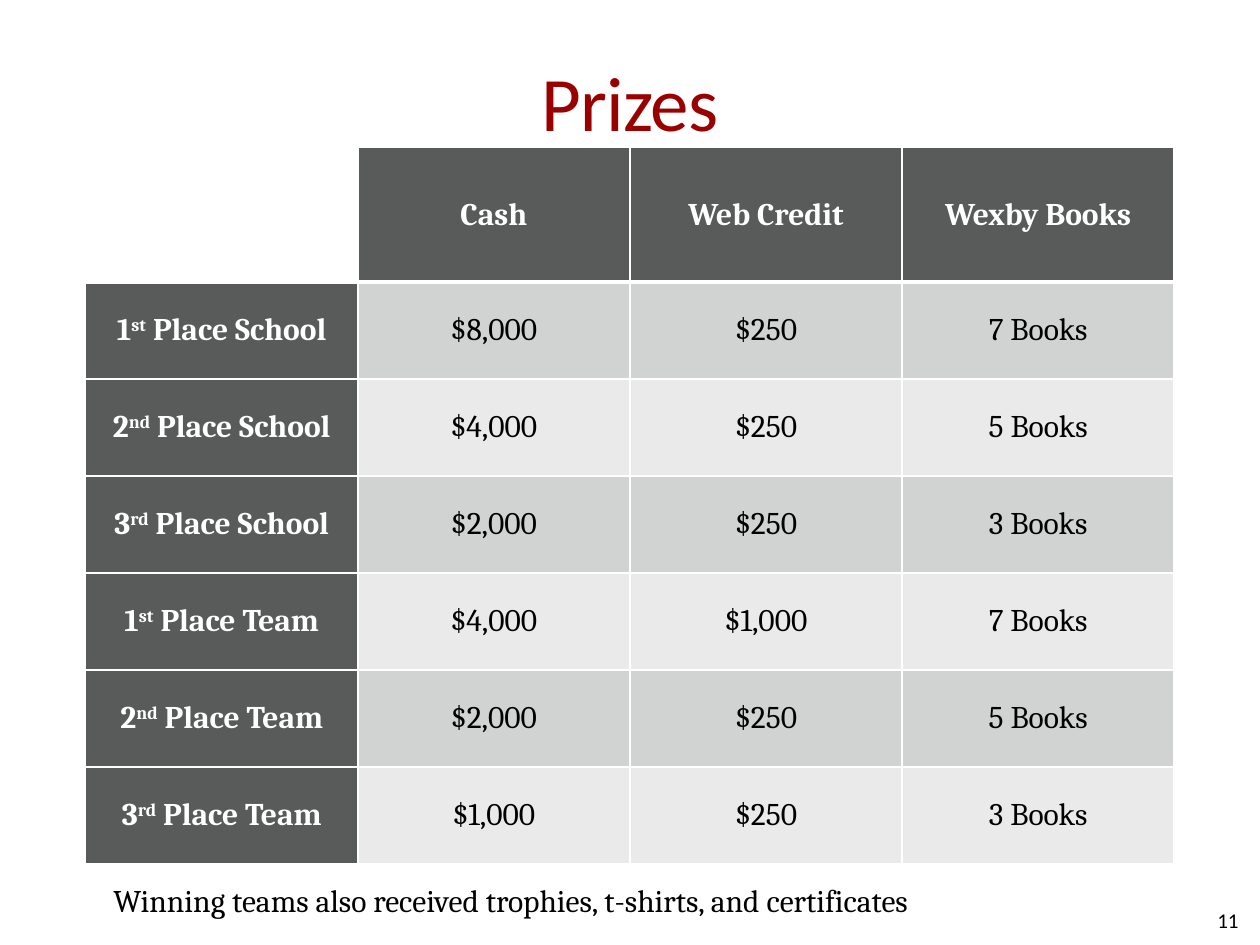
import pptx
import pptx.dml.color
import pptx.enum.text
import pptx.oxml
import pptx.oxml.ns
import pptx.util

Pt = pptx.util.Pt
ALIGN = pptx.enum.text.PP_ALIGN
MIDDLE = pptx.enum.text.MSO_ANCHOR.MIDDLE

COLORS = {
    "title": "990000",
    "header": "595A5A",
    "odd_row": "D1D2D2",
    "even_row": "EAEAEA",
    "light": "FFFFFF",
    "dark": "000000",
}
HEADINGS = ["Cash", "Web Credit", "Wexby Books"]
PRIZES = [
    ("1", "st", " Place School", "$8,000", "$250", "7 Books"),
    ("2", "nd", " Place School", "$4,000", "$250", "5 Books"),
    ("3", "rd", " Place School", "$2,000", "$250", "3 Books"),
    ("1", "st", " Place Team", "$4,000", "$1,000", "7 Books"),
    ("2", "nd", " Place Team", "$2,000", "$250", "5 Books"),
    ("3", "rd", " Place Team", "$1,000", "$250", "3 Books"),
]
COLUMN_WIDTH = 155.52
HEADER_HEIGHT = 77
ROW_HEIGHT = 55.44


def rgb(name):
    return pptx.dml.color.RGBColor.from_string(COLORS[name])


def style_paragraph(paragraph, font_name, size, color, align=ALIGN.CENTER, bold=False):
    paragraph.alignment = align
    paragraph.font.name = font_name
    paragraph.font.size = Pt(size)
    paragraph.font.bold = bold
    paragraph.font.color.rgb = rgb(color)


def add_text(slide, box, text, font_name, size, color, align=ALIGN.CENTER, insets=None):
    """Add a one-line text box; insets are (side, top and bottom)."""
    frame = slide.shapes.add_textbox(*map(Pt, box)).text_frame
    if insets:
        frame.word_wrap = True
        frame.vertical_anchor = MIDDLE
        frame.margin_left = frame.margin_right = Pt(insets[0])
        frame.margin_top = frame.margin_bottom = Pt(insets[1])
    else:
        frame.word_wrap = False
        frame.auto_size = pptx.enum.text.MSO_AUTO_SIZE.SHAPE_TO_FIT_TEXT
    paragraph = frame.paragraphs[0]
    paragraph.add_run().text = text
    style_paragraph(paragraph, font_name, size, color, align)
    return paragraph


def set_borders(cell, row):
    """Draw white cell borders, heavier below the heading row."""
    widths = {"L": 1, "R": 1, "T": 3 if row == 1 else 1, "B": 3 if row == 0 else 1}
    properties = cell._tc.get_or_add_tcPr()
    for side, width in widths.items():
        properties.append(pptx.oxml.parse_xml(
            f'<a:ln{side} {pptx.oxml.ns.nsdecls("a")} w="{int(Pt(width))}">'
            f'<a:solidFill><a:srgbClr val="{COLORS["light"]}"/></a:solidFill>'
            f'</a:ln{side}>'))


def fill_cell(cell, row, parts, fill, color, bold):
    """Write the text parts in one cell; the second part is superscript."""
    set_borders(cell, row)
    cell.fill.solid()
    cell.fill.fore_color.rgb = rgb(fill)
    cell.vertical_anchor = MIDDLE
    paragraph = cell.text_frame.paragraphs[0]
    for index, part in enumerate(parts):
        run = paragraph.add_run()
        run.text = part
        if index == 1:
            run._r.get_or_add_rPr().set("baseline", "30000")
    style_paragraph(paragraph, "Cambria", 18, color, bold=bold)


def add_prize_table(slide):
    rows, columns = len(PRIZES) + 1, len(HEADINGS) + 1
    table = slide.shapes.add_table(
        rows, columns, Pt(48.96), Pt(84.24), Pt(columns * COLUMN_WIDTH),
        Pt(HEADER_HEIGHT + len(PRIZES) * ROW_HEIGHT)).table
    table.first_row = table.horz_banding = False
    for column in table.columns:
        column.width = Pt(COLUMN_WIDTH)
    for row, table_row in enumerate(table.rows):
        table_row.height = Pt(ROW_HEIGHT if row else HEADER_HEIGHT)

    corner = table.cell(0, 0)
    set_borders(corner, 0)
    corner.fill.background()
    for column, heading in enumerate(HEADINGS, 1):
        fill_cell(table.cell(0, column), 0, [heading], "header", "light", True)
    for row, (*place, cash, credit, books) in enumerate(PRIZES, 1):
        fill_cell(table.cell(row, 0), row, place, "header", "light", True)
        band = "odd_row" if row % 2 else "even_row"
        for column, prize in enumerate((cash, credit, books), 1):
            fill_cell(table.cell(row, column), row, [prize], band, "dark", False)


def main():
    presentation = pptx.Presentation()
    presentation.slide_width, presentation.slide_height = Pt(720), Pt(540)
    slide = presentation.slides.add_slide(presentation.slide_layouts[6])
    title = add_text(slide, (36, 12.24, 648, 90), "Prizes", "Calibri", 44, "title",
                     insets=(0, 3.6))
    title.runs[0]._r.get_or_add_rPr().set("spc", "-50")
    add_text(slide, (540, 511.2, 167.76, 28.8), "11", "Calibri", 12, "dark",
             ALIGN.RIGHT, insets=(0, 0))
    add_prize_table(slide)
    add_text(slide, (38.16, 499.68, 507.6, 28.8),
             "Winning teams also received trophies, t-shirts, and certificates",
             "Cambria", 18, "dark")
    presentation.save("out.pptx")


if __name__ == "__main__":
    main()
